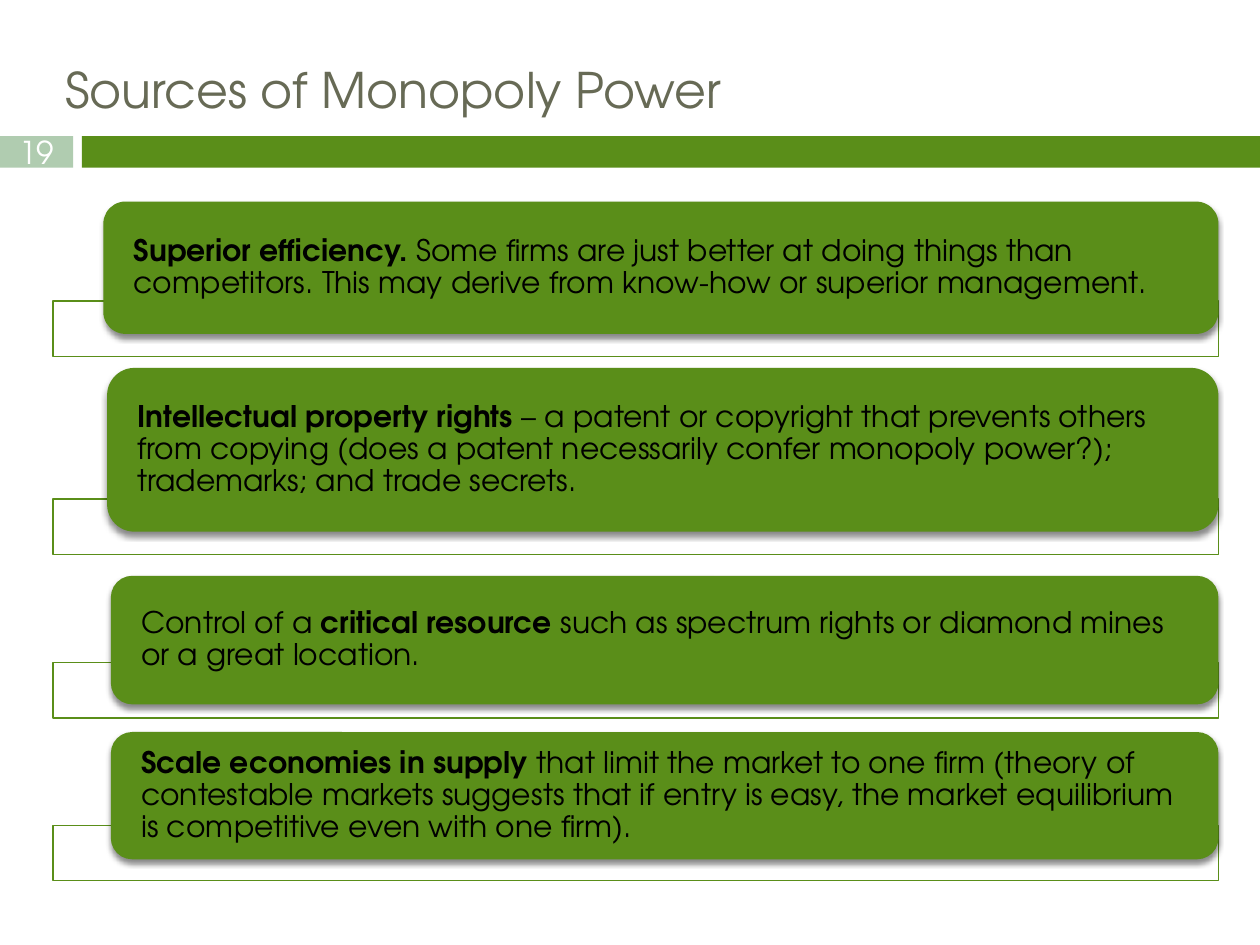
from lxml import etree
from pptx import Presentation
from pptx.dml.color import RGBColor
from pptx.enum.shapes import MSO_SHAPE as Shape
from pptx.enum.text import MSO_ANCHOR as Anchor, PP_ALIGN as Align
from pptx.oxml import parse_xml
from pptx.oxml.ns import nsdecls, qn
from pptx.util import Inches, Pt

# Content: each source has the card's left, top and height, the frame's top, and (text, bold) runs
TITLE = "Sources of Monopoly Power"
PAGE_NUMBER = "19"
SOURCES = [
    (0.82, 1.6, 1.05, 2.39, [
        ("Superior efficiency. ", True),
        ("Some firms are just better at doing things than competitors. "
         "This may derive from know-how or superior management.", False)]),
    (0.85, 2.92, 1.3, 3.96, [
        ("Intellectual property rights ", True),
        ("– a patent or copyright that prevents others from copying (does a patent "
         "necessarily confer monopoly power?); trademarks; and trade secrets.", False)]),
    (0.88, 4.57, 1.02, 5.26, [
        ("Control of a ", False),
        ("critical resource ", True),
        ("such as spectrum rights or diamond mines or a great location.", False)]),
    (0.88, 5.81, 1.01, 6.55, [
        ("Scale economies in supply ", True),
        ("that limit the market to one firm (theory of contestable markets suggests that "
         "if entry is easy, the market equilibrium is competitive even with one firm).", False)]),
]
THEME = {
    "font": "TeX Gyre Adventor",
    "green": "5A8E19", "pale": "B0CCB0", "white": "FFFFFF",
    "title": "676A55", "body": "000000",
    "title_size": 28, "number_size": 18, "body_size": 17,
}
LEFT, WIDTH = 0.42, 9.25
RIGHT = LEFT + WIDTH
FRAME_HEIGHT = 0.44
TEXT_INSET = 0.24
CORNER = 0.1667  # corner radius as a share of the card height
CORNER_INSET = 0.29  # share of the radius that the shape itself keeps clear of text


def add_block(slide, kind, left, top, width, height, fill, line=None):
    block = slide.shapes.add_shape(
        kind, Inches(left), Inches(top), Inches(width), Inches(height))
    block.shadow.inherit = False
    block.fill.solid()
    block.fill.fore_color.rgb = RGBColor.from_string(THEME[fill])
    if line:
        block.line.color.rgb = RGBColor.from_string(THEME[line])
        block.line.width = Pt(0.79)
    else:
        block.line.fill.background()
    return block


def set_insets(frame, side, vertical=0):
    frame.word_wrap = True
    frame.margin_left = frame.margin_right = Inches(side)
    frame.margin_top = frame.margin_bottom = Inches(vertical)


def add_run(paragraph, text, role, color, bold=False):
    run = paragraph.add_run()
    run.text = text
    run.font.name = THEME["font"]
    run.font.size = Pt(THEME[role + "_size"])
    run.font.color.rgb = RGBColor.from_string(THEME[color])
    run.font.bold = bold


def add_drop_shadow(card):
    effects = card._element.spPr.find(qn("a:effectLst"))
    effects.append(parse_xml(
        f'<a:outerShdw {nsdecls("a")} blurRad="{Pt(3)}" dist="{Pt(2.4)}" dir="5400000" '
        'rotWithShape="0"><a:srgbClr val="000000"><a:alpha val="45000"/></a:srgbClr>'
        '</a:outerShdw>'))


def add_source(slide, left, top, height, frame_top, runs):
    # Outlined frame behind the card
    frame = add_block(slide, Shape.RECTANGLE, LEFT, frame_top, WIDTH, FRAME_HEIGHT,
                      "white", "green")
    frame_color = frame._element.spPr.find(qn("a:solidFill"))[0]
    etree.SubElement(frame_color, qn("a:alpha"), val="90000")

    # Card with its text
    card = add_block(slide, Shape.ROUNDED_RECTANGLE, left, top, RIGHT - left, height, "green")
    card.adjustments[0] = CORNER
    add_drop_shadow(card)
    set_insets(card.text_frame, TEXT_INSET - CORNER_INSET * CORNER * height)
    card.text_frame.vertical_anchor = Anchor.MIDDLE
    paragraph = card.text_frame.paragraphs[0]
    paragraph.alignment = Align.LEFT
    paragraph.line_spacing = 0.9
    for text, bold in runs:
        add_run(paragraph, text, "body", "body", bold)


def main():
    prs = Presentation()
    prs.slide_width, prs.slide_height = Inches(10), Inches(7.5)
    slide = prs.slides.add_slide(prs.slide_layouts[6])

    # Header band and page number
    add_block(slide, Shape.RECTANGLE, 0.65, 1.08, 9.35, 0.25, "green")
    number = add_block(slide, Shape.RECTANGLE, 0, 1.08, 0.58, 0.25, "pale")
    set_insets(number.text_frame, 0)
    number.text_frame.vertical_anchor = Anchor.MIDDLE
    number.text_frame.paragraphs[0].alignment = Align.CENTER
    add_run(number.text_frame.paragraphs[0], PAGE_NUMBER, "number", "white")

    # Title
    title = slide.shapes.add_textbox(Inches(LEFT), Inches(0.42), Inches(WIDTH), Inches(0.65))
    set_insets(title.text_frame, 0.1, 0.05)
    add_run(title.text_frame.paragraphs[0], TITLE, "title", "title")

    # Sources of power
    for source in SOURCES:
        add_source(slide, *source)

    prs.save("out.pptx")


if __name__ == "__main__":
    main()
